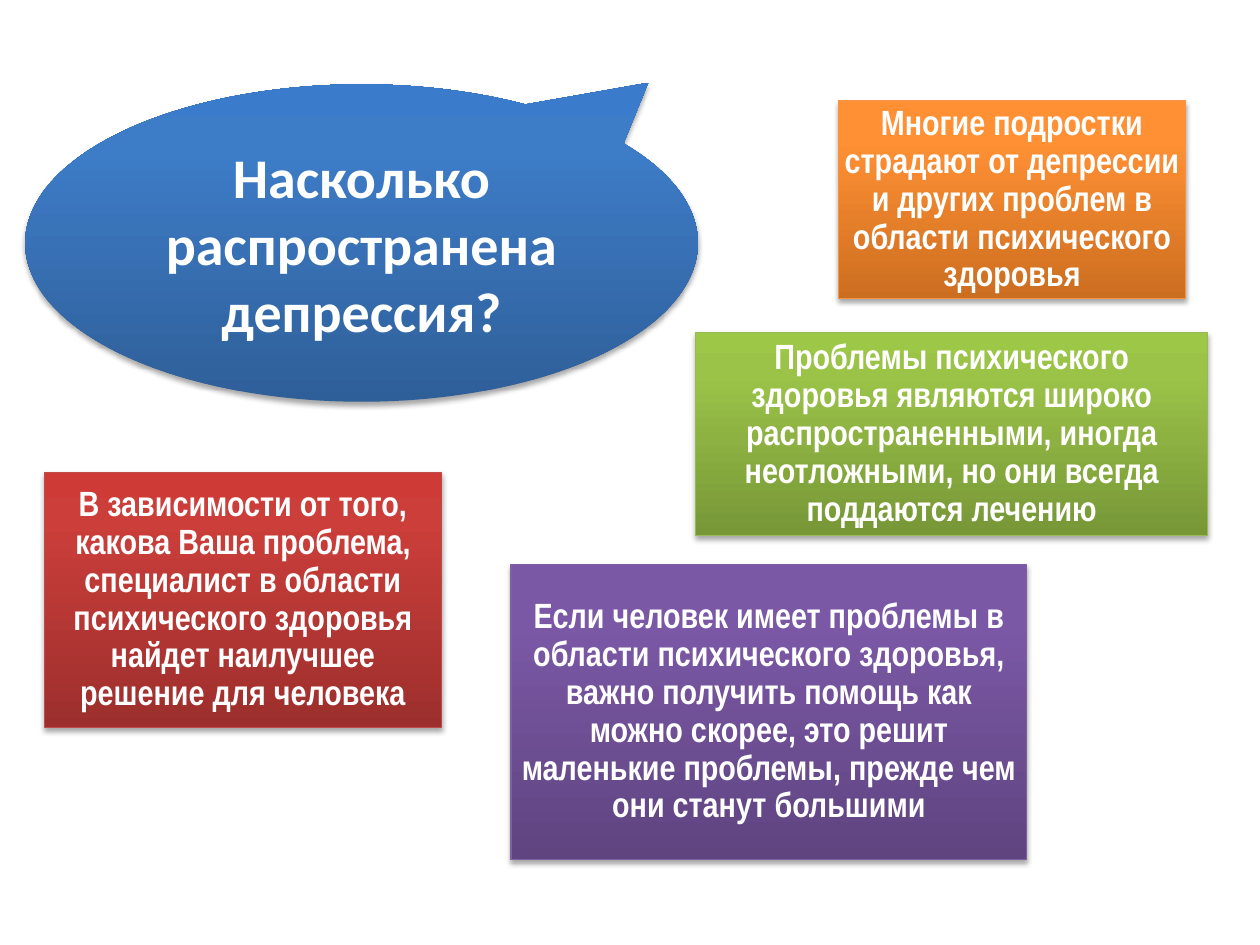
from copy import deepcopy

from lxml.etree import SubElement
from pptx import Presentation
from pptx.dml.color import RGBColor
from pptx.enum.shapes import MSO_SHAPE
from pptx.enum.text import MSO_ANCHOR, MSO_AUTO_SIZE, PP_ALIGN
from pptx.oxml.ns import qn
from pptx.util import Pt

# Content: text, colour name, (left, top, width, height) in points
QUESTION = "Насколько распространена депрессия?"
BUBBLE = (14.4, 48.2, 384.5, 181.4)
CARDS = [
    ("Проблемы психического здоровья являются широко распространенными, "
     "иногда неотложными, но они всегда поддаются лечению",
     "green", (397.6, 190.1, 292.6, 115.9)),
    ("Если человек имеет проблемы в области психического здоровья, важно "
     "получить помощь как можно скорее, это решит маленькие проблемы, "
     "прежде чем они станут большими",
     "purple", (292, 322.6, 294.8, 168.5)),
    ("Многие подростки страдают от депрессии и других проблем в области "
     "психического здоровья",
     "orange", (479, 57.8, 198.5, 113)),
    ("В зависимости от того, какова Ваша проблема, специалист в области "
     "психического здоровья найдет наилучшее решение для человека",
     "red", (25.4, 270, 226.8, 145.6)),
]

# Gradient colours run from bottom to top
STOPS = (0, 0.8, 1)
GRADIENTS = {
    "blue": ("2F5F99", "3D7CC7", "3A7CCB"),
    "green": ("779737", "9BC348", "9DC746"),
    "purple": ("5F4480", "7B58A6", "7C57A8"),
    "orange": ("CC6E20", "FF9034", "FF9136"),
    "red": ("9C2F2D", "CB3E3A", "CE3B37"),
}
COLOURS = {
    "text": "FFFFFF", "shadow": "000000", "green": "98B955",
    "purple": "7D60A0", "orange": "F69240", "red": "BF4C48",
}
TITLE_FONT = {"name": "Calibri", "size": Pt(32), "bold": True}
CARD_FONT = {"name": "Arial Narrow", "size": Pt(20), "bold": True}
SIDES = ("margin_left", "margin_top", "margin_right", "margin_bottom")


def points(values):
    return [Pt(value) for value in values]


def add_panel(page, kind, place, colour):
    """Add a shape with a vertical gradient and a soft shadow below it."""
    shape = page.shapes.add_shape(kind, *points(place))
    shape.fill.gradient()
    shape.fill.gradient_angle = 90
    stop_list = shape.element.spPr.find(qn("a:gradFill")).find(qn("a:gsLst"))
    stop_list.append(deepcopy(stop_list[-1]))
    for stop, position, value in zip(shape.fill.gradient_stops, STOPS, GRADIENTS[colour]):
        stop.position = position
        stop.color.rgb = RGBColor.from_string(value)
    if colour in COLOURS:
        shape.line.color.rgb = RGBColor.from_string(COLOURS[colour])
        shape.line.width = Pt(0.75)
    else:
        shape.line.fill.background()

    shape.shadow.inherit = False
    effects = shape.element.spPr.find(qn("a:effectLst"))
    shadow = SubElement(effects, qn("a:outerShdw"), blurRad=str(Pt(3.1)),
                        dist=str(Pt(1.8)), dir="5400000", rotWithShape="0")
    tint = SubElement(shadow, qn("a:srgbClr"), val=COLOURS["shadow"])
    SubElement(tint, qn("a:alpha"), val="35000")
    return shape


def write(box, text, font, spacing, margin=None):
    frame = box.text_frame
    frame.word_wrap = True
    frame.auto_size = MSO_AUTO_SIZE.NONE
    frame.vertical_anchor = MSO_ANCHOR.MIDDLE
    if margin is not None:
        for side in SIDES:
            setattr(frame, side, Pt(margin))
    paragraph = frame.paragraphs[0]
    paragraph.alignment = PP_ALIGN.CENTER
    paragraph.line_spacing = spacing
    span = paragraph.add_run()
    span.text = text
    for name, value in font.items():
        setattr(span.font, name, value)
    span.font.color.rgb = RGBColor.from_string(COLOURS["text"])


def main():
    deck = Presentation()
    deck.slide_width, deck.slide_height = Pt(720), Pt(540)
    page = deck.slides.add_slide(deck.slide_layouts[5])

    # Speech bubble, with the title placed in its inner rectangle
    bubble = add_panel(page, MSO_SHAPE.OVAL_CALLOUT, BUBBLE, "blue")
    bubble.adjustments[0], bubble.adjustments[1] = 0.426, -0.505
    left, top, width, height = BUBBLE
    inset = (1 - 0.5 ** 0.5) / 2
    title = page.shapes.title
    title.left, title.top, title.width, title.height = points((
        left + width * inset, top + height * inset,
        width * (1 - 2 * inset), height * (1 - 2 * inset)))
    write(title, QUESTION, TITLE_FONT, 1)
    bubble.element.addnext(title.element)

    # Answer cards
    for text, colour, place in CARDS:
        card = add_panel(page, MSO_SHAPE.RECTANGLE, place, colour)
        write(card, text, CARD_FONT, 0.9, margin=3.6)

    deck.save("out.pptx")


if __name__ == "__main__":
    main()
